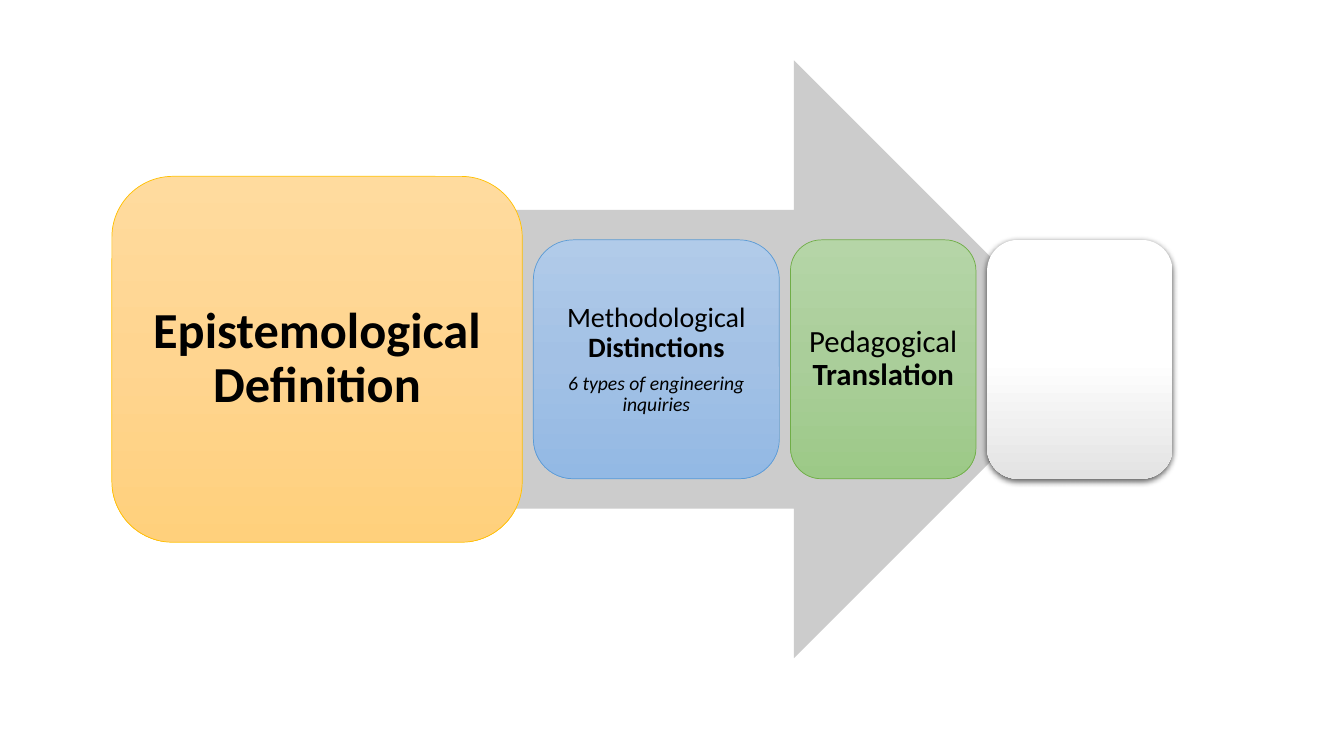
from copy import deepcopy

from lxml import etree
from pptx import Presentation
from pptx.dml.color import RGBColor
from pptx.enum.shapes import MSO_SHAPE
from pptx.enum.text import MSO_ANCHOR, PP_ALIGN
from pptx.oxml.ns import qn
from pptx.util import Inches, Pt

RIGHT_ARROW = MSO_SHAPE.RIGHT_ARROW
ROUND_RECT = MSO_SHAPE.ROUNDED_RECTANGLE
MIDDLE = MSO_ANCHOR.MIDDLE
CENTER = PP_ALIGN.CENTER

BLACK = RGBColor(0x00, 0x00, 0x00)
WHITE = RGBColor(0xFF, 0xFF, 0xFF)
GRAY = RGBColor(0xCC, 0xCC, 0xCC)
LIGHT_GRAY = RGBColor(0xE3, 0xE3, 0xE3)
GOLD = RGBColor(0xFF, 0xC0, 0x00)
BLUE = RGBColor(0x5B, 0x9B, 0xD5)
GREEN = RGBColor(0x70, 0xAD, 0x47)
GOLD_FADE = (RGBColor(0xFF, 0xDB, 0x9E), RGBColor(0xFF, 0xD5, 0x90), RGBColor(0xFF, 0xD0, 0x7C))
BLUE_FADE = (RGBColor(0xB1, 0xCB, 0xE9), RGBColor(0xA3, 0xC1, 0xE5), RGBColor(0x93, 0xB9, 0xE4))
GREEN_FADE = (RGBColor(0xB5, 0xD5, 0xA7), RGBColor(0xAA, 0xCE, 0x9A), RGBColor(0x9C, 0xC9, 0x87))
WHITE_FADE = (WHITE, WHITE, LIGHT_GRAY)

CENTER_Y = 3.565  # shared horizontal axis of the arrow and cards
CARD_LEFT, CARD_GAP = 1.11, 0.11


class ProcessSlide:
    font = "Calibri"

    def __init__(self, slide):
        self.slide = slide

    def shape(self, kind, left, width, height):
        """Add a shape centred on the axis, without line or shadow."""
        sp = self.slide.shapes.add_shape(
            kind, Inches(left), Inches(CENTER_Y - height / 2), Inches(width), Inches(height))
        sp.shadow.inherit = False
        sp.line.fill.background()
        return sp

    def arrow(self, left, width, height, color):
        sp = self.shape(RIGHT_ARROW, left, width, height)
        sp.fill.solid()
        sp.fill.fore_color.rgb = color

    def card(self, left, width, height, fade, line=None):
        sp = self.shape(ROUND_RECT, left, width, height)
        self.gradient(sp, fade)
        if line is None:
            self.shadow(sp)
        else:
            sp.line.color.rgb = line
            sp.line.width = Pt(0.5)
        return sp

    def gradient(self, sp, colors):
        """Fill from top to bottom with three evenly spaced colours."""
        sp.fill.gradient()
        sp.fill.gradient_angle = 270
        first = sp.fill._xPr.find(".//" + qn("a:gs"))
        first.addnext(deepcopy(first))
        for i, (stop, color) in enumerate(zip(sp.fill.gradient_stops, colors)):
            stop.position = i / 2
            stop.color.rgb = color

    def shadow(self, sp):
        effects = sp._element.spPr.find(qn("a:effectLst"))
        outer = etree.SubElement(effects, qn("a:outerShdw"), blurRad=str(Pt(4.5)),
                                 dist=str(Pt(1.5)), dir="5400000", algn="ctr", rotWithShape="0")
        color = etree.SubElement(outer, qn("a:srgbClr"), val=str(BLACK))
        etree.SubElement(color, qn("a:alpha"), val="63000")

    def text(self, sp, inset, paragraphs):
        """Write paragraphs given as (size, italic, [(text, bold), ...])."""
        tf = sp.text_frame
        tf.word_wrap = True
        tf.vertical_anchor = MIDDLE
        tf.margin_left = tf.margin_right = tf.margin_top = tf.margin_bottom = Inches(inset)
        for i, (size, italic, runs) in enumerate(paragraphs):
            p = tf.add_paragraph() if i else tf.paragraphs[0]
            p.alignment = CENTER
            p.line_spacing = 0.9
            p.space_after = Pt(round(size * 0.35))
            p.font.name = self.font
            p.font.size = Pt(size)
            p.font.italic = italic
            p.font.color.rgb = BLACK
            for words, bold in runs:
                r = p.add_run()
                r.text = words
                r.font.bold = bold


def main():
    prs = Presentation()
    prs.slide_width, prs.slide_height = Inches(13.33), Inches(7.5)
    s = ProcessSlide(prs.slides.add_slide(prs.slide_layouts[6]))

    # Background arrow
    s.arrow(1.9, 8.94, 5.93, GRAY)

    # Cards: width, height, fade, line, text inset, paragraphs
    cards = [
        (4.07, 3.63, GOLD_FADE, GOLD, 0.15,
         [(36, False, [("Epistemological Definition", True)])]),
        (2.44, 2.37, BLUE_FADE, BLUE, 0.08,
         [(20, False, [("Methodological ", False), ("Distinctions", True)]),
          (14, True, [("6 types of engineering inquiries", False)])]),
        (1.84, 2.37, GREEN_FADE, GREEN, 0.09,
         [(22, False, [("Pedagogical ", False), ("Translation", True)])]),
        (1.84, 2.37, WHITE_FADE, None, 0, []),
    ]
    left = CARD_LEFT
    for width, height, fade, line, inset, paragraphs in cards:
        sp = s.card(left, width, height, fade, line)
        if paragraphs:
            s.text(sp, inset, paragraphs)
        left += width + CARD_GAP

    prs.save("out.pptx")


if __name__ == "__main__":
    main()
